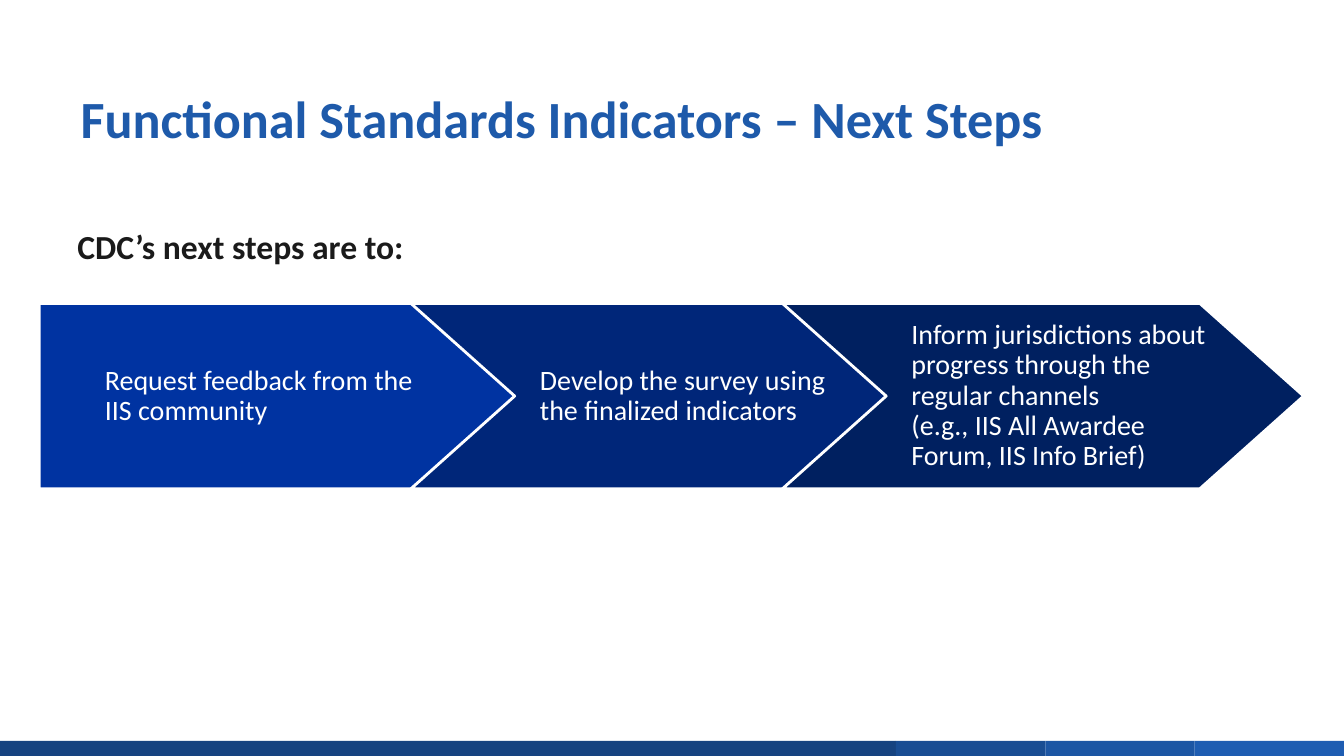
"""Build the slide on next steps for the Functional Standards Indicators."""
from pptx import Presentation
from pptx.dml.color import RGBColor
from pptx.enum.shapes import MSO_SHAPE
from pptx.enum.text import MSO_ANCHOR, PP_ALIGN
from pptx.util import Inches, Pt


def paint(fmt, color):
    """Give a fill a solid hex colour."""
    fmt.solid()
    fmt.fore_color.rgb = RGBColor.from_string(color)


def write(tf, lines, size, color, bold, anchor, insets, spacing):
    """Set one paragraph, with a line break between lines."""
    tf.word_wrap = True
    tf.vertical_anchor = anchor
    tf.margin_left, tf.margin_top, tf.margin_right, tf.margin_bottom = map(Inches, insets)
    p = tf.paragraphs[0]
    p.alignment = PP_ALIGN.LEFT
    p.line_spacing = spacing
    for i, line in enumerate(lines):
        if i:
            p.add_line_break()
        r = p.add_run()
        r.text = line
        r.font.name = "Calibri"
        r.font.size = Pt(size)
        r.font.bold = bold
        paint(r.font.fill, color)


prs = Presentation()
prs.slide_width, prs.slide_height = Inches(13.33), Inches(7.5)
s = prs.slides.add_slide(prs.slide_layouts[6])

col = prs.slide_width / 9
bar_top = Inches(7.35)
for start, span, color in [(0, 6, "164380"), (6, 1, "194D93"), (7, 1, "1C56A4"), (8, 1, "1E5DB2")]:
    sp = s.shapes.add_shape(MSO_SHAPE.RECTANGLE, int(start * col), bar_top,
                            int(span * col), prs.slide_height - bar_top)
    sp.shadow.inherit = False
    paint(sp.fill, color)
    sp.line.fill.background()

left, top, width, height = 0.39, 3.01, 5.17, 1.84
pitch, point = 3.685, 1.03
steps = [
    ("0033A1", ["Request feedback from the", "IIS community"], (0.65, 0.06, 0.49, 0.06)),
    ("002679", ["Develop the survey using the finalized indicators"], (1.28, 0.06, 0.95, 0.06)),
    ("002060", ["Inform jurisdictions about progress through the regular channels",
                "(e.g., IIS All Awardee Forum, IIS Info Brief)"], (1.28, 0.06, 0.95, 0.06)),
]
for i, (color, lines, insets) in enumerate(steps):
    x = left + i * pitch
    middle, bottom = top + height / 2, top + height
    outline = [(x, top), (x + width - point, top), (x + width, middle),
               (x + width - point, bottom), (x, bottom)]
    if i:
        outline.append((x + point, middle))
    points = [(Inches(px), Inches(py)) for px, py in outline]
    builder = s.shapes.build_freeform(*points[0])
    builder.add_line_segments(points[1:], close=True)
    sp = builder.convert_to_shape()
    sp.shadow.inherit = False
    paint(sp.fill, color)
    paint(sp.line.fill, "FFFFFF")
    sp.line.width = Pt(2)
    write(sp.text_frame, lines, 20, "FFFFFF", False, MSO_ANCHOR.MIDDLE, insets, 0.9)

headings = [
    (0.3, 1.25, "Functional Standards Indicators – Next Steps", 37.3, "1E5AAA",
     MSO_ANCHOR.BOTTOM, (0.13, 0.07, 0.13, 0.07), Pt(40)),
    (2.19, 0.5, "CDC’s next steps are to:", 24, "1A1A1A",
     MSO_ANCHOR.TOP, (0.1, 0.05, 0.1, 0.05), 1.0),
]
for y, h, text, size, color, anchor, insets, spacing in headings:
    sp = s.shapes.add_textbox(Inches(0.67), Inches(y), Inches(12), Inches(h))
    write(sp.text_frame, [text], size, color, True, anchor, insets, spacing)

prs.save("out.pptx")
